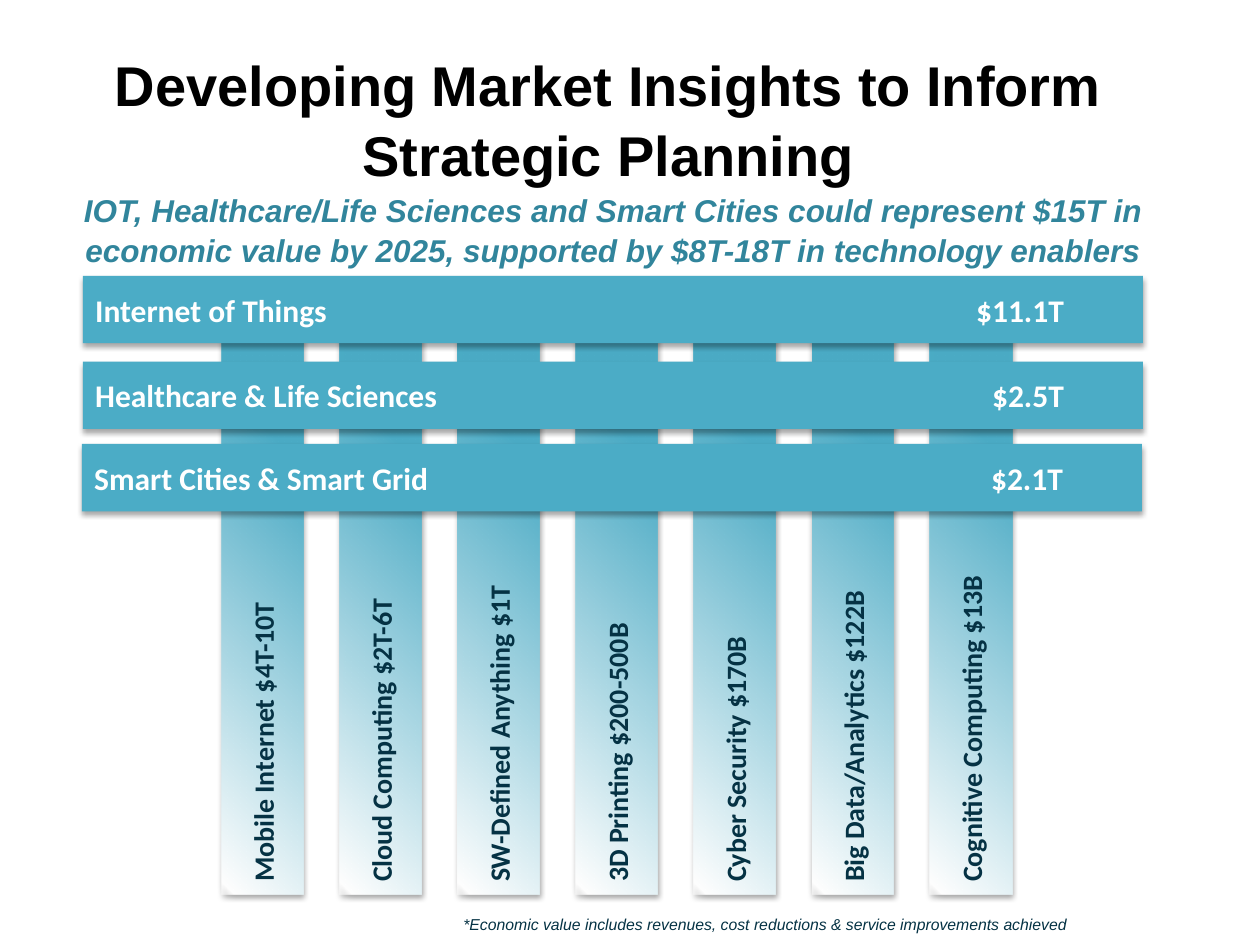
from dataclasses import dataclass

from lxml.etree import SubElement
from pptx import Presentation
from pptx.dml.color import RGBColor
from pptx.enum.shapes import MSO_SHAPE
from pptx.enum.text import MSO_ANCHOR, PP_ALIGN
from pptx.oxml import parse_xml
from pptx.oxml.ns import nsdecls, qn
from pptx.util import Cm, Pt


@dataclass(frozen=True)
class Theme:
    teal: str = "4BACC6"
    deep_teal: str = "31859C"
    navy: str = "053244"
    black: str = "000000"
    white: str = "FFFFFF"
    heading_font: str = "Arial"
    label_font: str = "Calibri"
    title_size: int = 32
    text_size: int = 18
    pillar_size: int = 16
    note_size: int = 9


def write(frame, text, *, font, size, color, bold=False, italic=False,
          align=PP_ALIGN.LEFT, anchor=MSO_ANCHOR.TOP, spacing=None, tab=None):
    """Fill a text frame with one formatted paragraph."""
    frame.word_wrap = True
    frame.vertical_anchor = anchor
    para = frame.paragraphs[0]
    para.alignment = align
    if spacing:
        para.line_spacing = spacing
    if tab:
        stops = SubElement(para._p.get_or_add_pPr(), qn("a:tabLst"))
        SubElement(stops, qn("a:tab"), pos=str(tab), algn="r")
    span = para.add_run()
    span.text = text
    span.font.name = font
    span.font.size = Pt(size)
    span.font.bold = bold
    span.font.italic = italic
    span.font.color.rgb = RGBColor.from_string(color)


class SlideBuilder:
    def __init__(self, page, theme):
        self.page = page
        self.theme = theme

    def text(self, text, left, top, width, height, insets=None, **style):
        box = self.page.shapes.add_textbox(Cm(left), Cm(top), Cm(width), Cm(height))
        frame = box.text_frame
        if insets:
            (frame.margin_left, frame.margin_top,
             frame.margin_right, frame.margin_bottom) = map(Cm, insets)
        write(frame, text, font=self.theme.heading_font, **style)

    def block(self, left, top, width, height):
        """Borderless rectangle with a soft shadow below it."""
        shape = self.page.shapes.add_shape(
            MSO_SHAPE.RECTANGLE, Cm(left), Cm(top), Cm(width), Cm(height))
        shape.line.fill.background()
        shape.shadow.inherit = False
        effects = shape.element.spPr.find(qn("a:effectLst"))
        effects.append(parse_xml(
            f'<a:outerShdw {nsdecls("a")} blurRad="40000" dist="23000" dir="5400000" '
            f'rotWithShape="0"><a:srgbClr val="{self.theme.black}">'
            '<a:alpha val="35000"/></a:srgbClr></a:outerShdw>'))
        return shape

    def pillar(self, text, left, top, width, height):
        theme = self.theme
        shape = self.block(left, top, width, height)
        # Radial fade from the top right corner
        gradient = parse_xml(
            f'<a:gradFill {nsdecls("a")} rotWithShape="1"><a:gsLst>'
            f'<a:gs pos="0"><a:srgbClr val="{theme.teal}"/></a:gs>'
            f'<a:gs pos="25000"><a:srgbClr val="{theme.teal}"/></a:gs>'
            f'<a:gs pos="98000"><a:srgbClr val="{theme.white}"/></a:gs>'
            f'<a:gs pos="100000"><a:srgbClr val="{theme.white}">'
            '<a:alpha val="50000"/></a:srgbClr></a:gs></a:gsLst>'
            '<a:path path="circle"><a:fillToRect l="100000" b="100000"/></a:path>'
            '</a:gradFill>')
        shape.element.spPr.find(qn("a:ln")).addprevious(gradient)
        shape.element.txBody.bodyPr.set("vert", "vert270")
        write(shape.text_frame, text, font=theme.label_font, size=theme.pillar_size,
              color=theme.navy, bold=True, anchor=MSO_ANCHOR.MIDDLE)

    def bar(self, name, value, left, top, width, height):
        theme = self.theme
        shape = self.block(left, top, width, height)
        shape.fill.solid()
        shape.fill.fore_color.rgb = RGBColor.from_string(theme.teal)
        write(shape.text_frame, f"{name}\t{value}", font=theme.label_font,
              size=theme.text_size, color=theme.white, bold=True,
              anchor=MSO_ANCHOR.MIDDLE, tab=Cm(19.53))


PILLARS = [
    "Mobile Internet $4T-10T",
    "Cloud Computing $2T-6T",
    "SW-Defined Anything $1T",
    "3D Printing $200-500B",
    "Cyber Security $170B",
    "Big Data/Analytics $122B",
    "Cognitive Computing $13B",
]
BARS = [
    ("Internet of Things", "$11.1T", 1.67, 5.56),
    ("Healthcare & Life Sciences", "$2.5T", 1.67, 7.29),
    ("Smart Cities & Smart Grid", "$2.1T", 1.65, 8.95),
]


def main():
    deck = Presentation()
    deck.slide_width, deck.slide_height = Cm(25.4), Cm(19.05)
    theme = Theme()
    builder = SlideBuilder(deck.slides.add_slide(deck.slide_layouts[6]), theme)

    # Title
    builder.text("Developing Market Insights to Inform Strategic Planning",
                 2.01, 0.84, 20.52, 2.03, size=theme.title_size, color=theme.black,
                 bold=True, align=PP_ALIGN.CENTER, spacing=1.04)

    # Technology pillars, then the market bars across them
    for index, label in enumerate(PILLARS):
        builder.pillar(label, 4.47 + 2.38 * index, 5.99, 1.65, 12.04)
    for name, value, left, top in BARS:
        builder.bar(name, value, left, top, 21.37, 1.36)

    # Footnote
    builder.text("*Economic value includes revenues, cost reductions & service "
                 "improvements achieved", 7.65, 18.31, 14.1, 0.89,
                 size=theme.note_size, color=theme.navy, italic=True,
                 align=PP_ALIGN.RIGHT)

    # Key message
    builder.text("IOT, Healthcare/Life Sciences and Smart Cities could represent $15T in "
                 "economic value by 2025, supported by $8T-18T in technology enablers",
                 0.1, 3.78, 23.5, 1.83, insets=(1.27, 0.13, 0.25, 0.2),
                 size=theme.text_size, color=theme.deep_teal, bold=True, italic=True,
                 align=PP_ALIGN.CENTER, anchor=MSO_ANCHOR.BOTTOM, spacing=1.04)

    deck.save("out.pptx")


if __name__ == "__main__":
    main()
